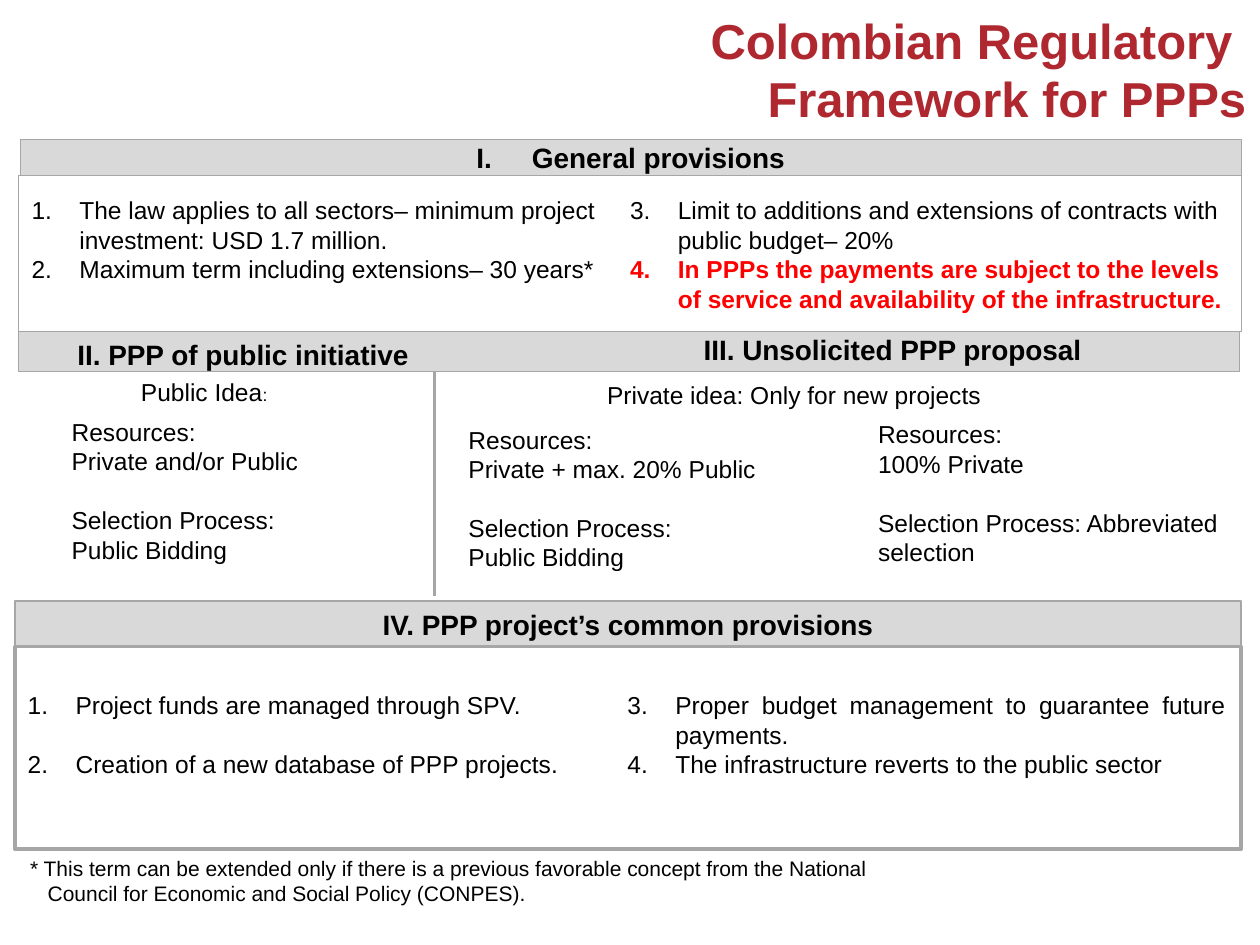
from lxml.etree import SubElement
from pptx import Presentation
from pptx.dml.color import RGBColor
from pptx.enum.shapes import MSO_CONNECTOR as Connector, MSO_SHAPE as Shape
from pptx.enum.text import MSO_ANCHOR as Anchor, MSO_AUTO_SIZE as AutoSize, PP_ALIGN as Align
from pptx.oxml.ns import qn
from pptx.util import Inches, Pt

COLORS = {"title": "AF272F", "text": "000000", "alert": "FF0000",
          "band": "D9D9D9", "border": "A6A6A6"}

presentation = Presentation()
presentation.slide_width, presentation.slide_height = Inches(10), Inches(7.5)
slide = presentation.slides.add_slide(presentation.slide_layouts[4])


def place(shape, left, top, width, height, anchor=Anchor.TOP):
    """Position a shape and give its text frame fixed, wrapped settings."""
    shape.left, shape.top = Inches(left), Inches(top)
    shape.width, shape.height = Inches(width), Inches(height)
    frame = shape.text_frame
    frame.auto_size, frame.word_wrap = AutoSize.NONE, True
    frame.vertical_anchor = anchor
    return frame


def write(frame, text, size=14, color="text", bold=False, align=Align.LEFT,
          before=0, indent=0, number=None, start=1):
    """Add one paragraph, with a hanging indent and automatic number if asked."""
    first = frame.paragraphs[0]
    paragraph = frame.add_paragraph() if first.runs else first
    paragraph.alignment, paragraph.line_spacing = align, 1.0
    paragraph.space_before = Pt(before)
    properties = paragraph._p.get_or_add_pPr()
    properties.set("marL", str(Inches(indent)))
    properties.set("indent", str(-Inches(indent)))
    if number:
        SubElement(properties, qn("a:buFont"), typeface="+mj-lt")
        SubElement(properties, qn("a:buAutoNum"), type=number, startAt=str(start))
    else:
        SubElement(properties, qn("a:buNone"))
    for index, line in enumerate(text.split("\n")):
        if index:
            paragraph.add_line_break()
        run = paragraph.add_run()
        run.text = line
        run.font.name, run.font.size, run.font.bold = "Arial", Pt(size), bold
        run.font.color.rgb = RGBColor.from_string(COLORS[color])
    return paragraph


# Title
title = place(slide.shapes.title, 3.18, 0, 6.81, 0.84)
title.margin_top = Inches(0.08)
for line in ("Colombian Regulatory ", "Framework for PPPs"):
    write(title, line, 28, "title", True, Align.RIGHT)

# Bands and frames: left, top, width, height, fill, line width, heading, numbering
panels = [
    (0.15, 2.63, 9.69, 0.32, "band", 0.5, None, None),
    (0.12, 4.77, 9.73, 0.37, "band", 0.75, "IV. PPP project’s common provisions", None),
    (0.12, 5.13, 9.73, 1.61, None, 2, None, None),
    (0.16, 1.11, 9.69, 0.28, "band", 0.5, "General provisions", "romanUcPeriod"),
    (0.15, 1.39, 9.70, 1.24, None, 0.5, None, None),
]
for left, top, width, height, fill, weight, heading, number in panels:
    panel = slide.shapes.add_shape(Shape.RECTANGLE, 0, 0, 0, 0)
    frame = place(panel, left, top, width, height, Anchor.MIDDLE)
    panel.shadow.inherit = False
    if fill:
        panel.fill.solid()
        panel.fill.fore_color.rgb = RGBColor.from_string(COLORS[fill])
    else:
        panel.fill.background()
    panel.line.color.rgb = RGBColor.from_string(COLORS["border"])
    panel.line.width = Pt(weight)
    if heading:
        write(frame, heading, 16, bold=True, align=Align.CENTER,
              indent=0.44 if number else 0, number=number)

# Divider between public and private initiative
divider = slide.shapes.add_connector(Connector.STRAIGHT, Inches(3.45), Inches(2.95),
                                     Inches(3.45), Inches(4.73))
divider.line.color.rgb = RGBColor.from_string(COLORS["border"])
divider.line.width = Pt(2)
SubElement(divider._element.spPr, qn("a:effectLst"))

# Numbered lists: left, top, height, alignment, gap between items, first number, items
lists = [
    (0.15, 1.5, 1.05, Align.LEFT, 0, 1, [
        "The law applies to all sectors– minimum project investment: USD 1.7 million.",
        "Maximum term including extensions– 30 years*"]),
    (4.9, 1.5, 1.05, Align.LEFT, 0, 3, [
        "Limit to additions and extensions of contracts with public budget– 20%",
        "In PPPs the payments are subject to the levels of service and availability "
        "of the infrastructure."]),
    (0.12, 5.43, 1.2, Align.JUSTIFY, 16.8, 1, [
        "Project funds are managed through SPV.",
        "Creation of a new database of PPP projects."]),
    (4.88, 5.43, 1.2, Align.JUSTIFY, 0, 3, [
        "Proper budget management to guarantee future payments.",
        "The infrastructure reverts to the public sector"]),
]
for index, (left, top, height, align, gap, start, items) in enumerate(lists, 1):
    frame = place(slide.placeholders[index], left, top, 4.95, height)
    for position, item in enumerate(items):
        alert = item.startswith("In PPPs")
        write(frame, item, color="alert" if alert else "text", bold=alert, align=align,
              before=gap if position else 0, indent=0.38,
              number="arabicPeriod", start=start)

# Headings of the two initiatives
for left, top, width, heading in [(0.2, 2.63, 3.46, "II. PPP of public initiative"),
                                  (5.11, 2.59, 3.95, "III. Unsolicited PPP proposal")]:
    frame = place(slide.shapes.add_textbox(0, 0, 0, 0), left, top, width, 0.37)
    write(frame, heading, 16, bold=True, align=Align.CENTER)

# Ideas behind each initiative
frame = place(slide.shapes.add_textbox(0, 0, 0, 0), 4.72, 2.97, 3.87, 0.34)
write(frame, "Private idea: Only for new projects")
frame = place(slide.shapes.add_textbox(0, 0, 0, 0), 1.02, 2.94, 1.45, 0.34)
colon = write(frame, "Public Idea").add_run()
colon.text = ":"
colon.font.name, colon.font.size = "Arial", Pt(10)
colon.font.color.rgb = RGBColor.from_string(COLORS["text"])

# Resources and selection process of each route
routes = [
    (0.47, 3.26, 2.79, "Private and/or Public", ["Selection Process:", "Public Bidding"]),
    (3.62, 3.32, 3.1, "Private + max. 20% Public", ["Selection Process:", "Public Bidding"]),
    (6.87, 3.28, 2.92, "100% Private", ["Selection Process: Abbreviated selection"]),
]
for left, top, width, resources, selection in routes:
    frame = place(slide.shapes.add_textbox(0, 0, 0, 0), left, top, width, 1.28)
    write(frame, "Resources:")
    write(frame, resources)
    for position, line in enumerate(selection):
        write(frame, line, before=0 if position else 16.8)

# Footnote
frame = place(slide.shapes.add_textbox(0, 0, 0, 0), 0.14, 6.74, 7.05, 0.5)
write(frame, "* This term can be extended only if there is a previous favorable concept "
      "from the National\nCouncil for Economic and Social Policy (CONPES).", 12, indent=0.14)

presentation.save("out.pptx")
